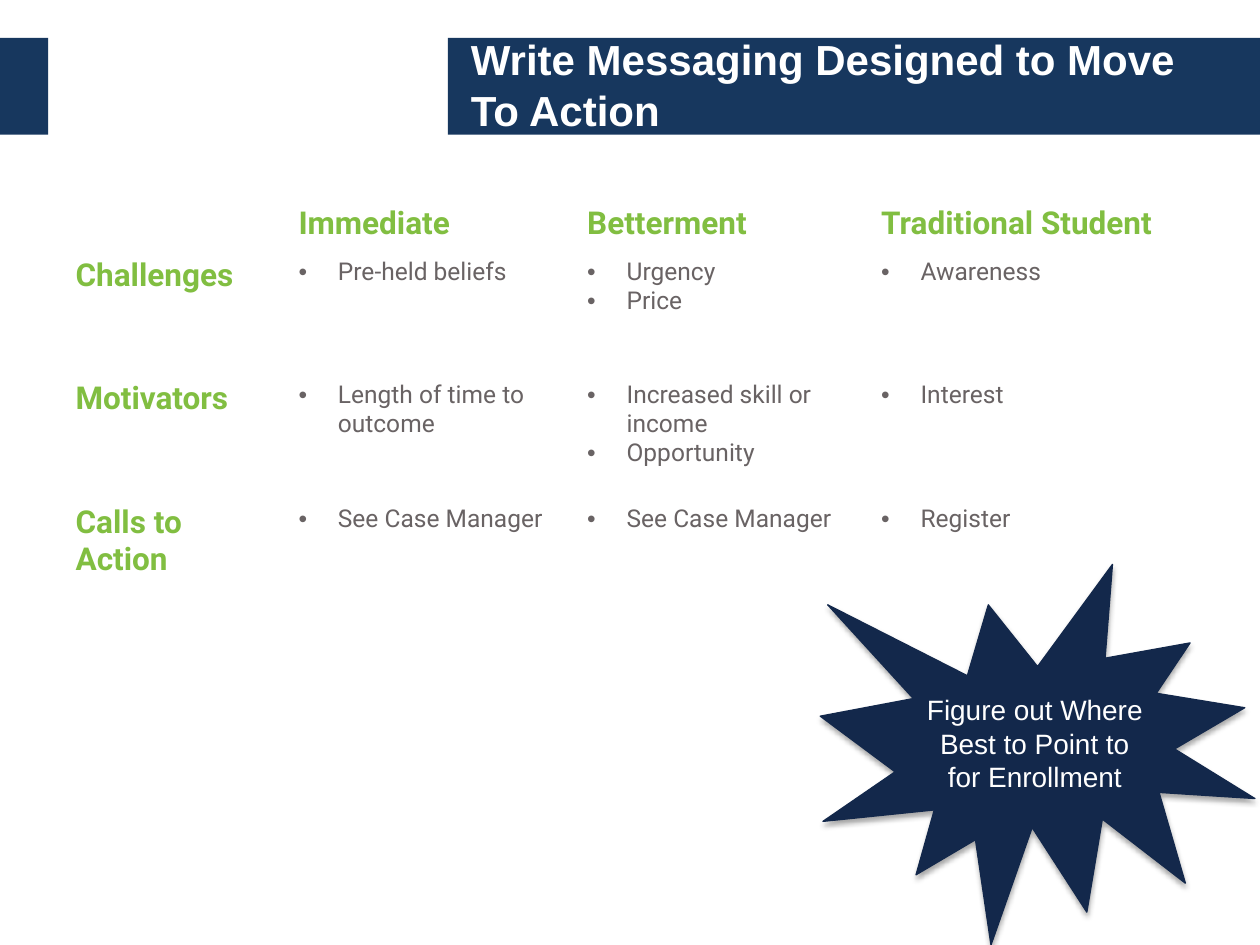
from lxml import etree
from pptx import Presentation
from pptx.dml.color import RGBColor
from pptx.enum.shapes import MSO_SHAPE
from pptx.enum.text import MSO_ANCHOR, PP_ALIGN
from pptx.oxml.ns import qn
from pptx.util import Pt

RECTANGLE = MSO_SHAPE.RECTANGLE
BURST = MSO_SHAPE.EXPLOSION1
MIDDLE = MSO_ANCHOR.MIDDLE
LEFT, CENTER = PP_ALIGN.LEFT, PP_ALIGN.CENTER

NAVY, MIDNIGHT, GREEN, GRAY, WHITE = "17375E", "13284B", "81BE41", "696364", "FFFFFF"

AUDIENCES = ["Immediate", "Betterment", "Traditional Student"]
MESSAGES = [
    ("Challenges", [["Pre-held beliefs"], ["Urgency", "Price"], ["Awareness"]]),
    ("Motivators", [["Length of time to outcome"],
                    ["Increased skill or income", "Opportunity"], ["Interest"]]),
    ("Calls to Action", [["See Case Manager"], ["See Case Manager"], ["Register"]]),
]


def color(value):
    return RGBColor.from_string(value)


class SlideBuilder:
    heading_font = "Arial"
    table_font = "Roboto"
    bullet_indent = Pt(22.5)

    def __init__(self, slide):
        self.slide = slide

    def add_text(self, paragraph, text, font, size, ink, bold=False, align=LEFT):
        paragraph.alignment = align
        run = paragraph.add_run()
        run.text = text
        run.font.name = font
        run.font.size = Pt(size)
        run.font.bold = bold
        run.font.color.rgb = color(ink)

    def shape(self, kind, left, top, width, height, fill):
        shape = self.slide.shapes.add_shape(kind, Pt(left), Pt(top), Pt(width), Pt(height))
        shape.shadow.inherit = False
        shape.fill.solid()
        shape.fill.fore_color.rgb = color(fill)
        shape.line.fill.background()
        return shape

    def title(self, text, left, top, width, height):
        box = self.slide.shapes.add_textbox(Pt(left), Pt(top), Pt(width), Pt(height))
        frame = box.text_frame
        frame.word_wrap = True
        frame.vertical_anchor = MIDDLE
        self.add_text(frame.paragraphs[0], text, self.heading_font, 24, WHITE, bold=True)

    def burst(self, text, left, top, width, height):
        burst = self.shape(BURST, left, top, width, height, MIDNIGHT)
        burst.line.color.rgb = color(MIDNIGHT)
        burst.line.width = Pt(0.75)
        effects = burst._element.spPr.find(qn("a:effectLst"))
        shadow = etree.SubElement(effects, qn("a:outerShdw"), blurRad=str(Pt(3.1)),
                                  dist=str(Pt(1.8)), dir="5400000", rotWithShape="0")
        tint = etree.SubElement(shadow, qn("a:srgbClr"), val="000000")
        etree.SubElement(tint, qn("a:alpha"), val="35000")
        frame = burst.text_frame
        frame.word_wrap = True
        frame.vertical_anchor = MIDDLE
        self.add_text(frame.paragraphs[0], text, self.heading_font, 16, WHITE, align=CENTER)

    def label(self, cell, text):
        self.add_text(cell.text_frame.paragraphs[0], text, self.table_font, 18, GREEN, bold=True)

    def bullets(self, cell, items):
        frame = cell.text_frame
        for index, item in enumerate(items):
            paragraph = frame.add_paragraph() if index else frame.paragraphs[0]
            properties = paragraph._p.get_or_add_pPr()
            properties.set("marL", str(self.bullet_indent))
            properties.set("indent", str(-self.bullet_indent))
            etree.SubElement(properties, qn("a:buFont"), typeface="Arial")
            etree.SubElement(properties, qn("a:buChar"), char="•")
            self.add_text(paragraph, item, self.table_font, 14, GRAY)

    def message_table(self, left, top, widths, heights):
        table = self.slide.shapes.add_table(
            len(heights), len(widths), Pt(left), Pt(top),
            Pt(sum(widths)), Pt(sum(heights))).table
        table.first_row = False
        table.horz_banding = False
        for column, width in zip(table.columns, widths):
            column.width = Pt(width)
        for row, height in zip(table.rows, heights):
            row.height = Pt(height)
        for cell in table.iter_cells():
            cell.fill.background()
        for column, audience in enumerate(AUDIENCES, 1):
            self.label(table.cell(0, column), audience)
        for row, (topic, answers) in enumerate(MESSAGES, 1):
            self.label(table.cell(row, 0), topic)
            for column, items in enumerate(answers, 1):
                self.bullets(table.cell(row, column), items)


def main():
    deck = Presentation()
    deck.slide_width, deck.slide_height = Pt(720), Pt(540)
    builder = SlideBuilder(deck.slides.add_slide(deck.slide_layouts[6]))
    for left, width in ((256, 464), (0, 27.5)):
        builder.shape(RECTANGLE, left, 21.6, width, 55.4, NAVY)
    builder.title("Write Messaging Designed to Move To Action", 262, 20.5, 437, 55.4)
    builder.message_table(36, 114, [127.4, 165, 168, 187.6], [29.5] + [70.5] * 3)
    builder.burst("Figure out Where Best to Point to for Enrollment", 468.7, 322.5, 248.4, 217.5)
    deck.save("out.pptx")


if __name__ == "__main__":
    main()
